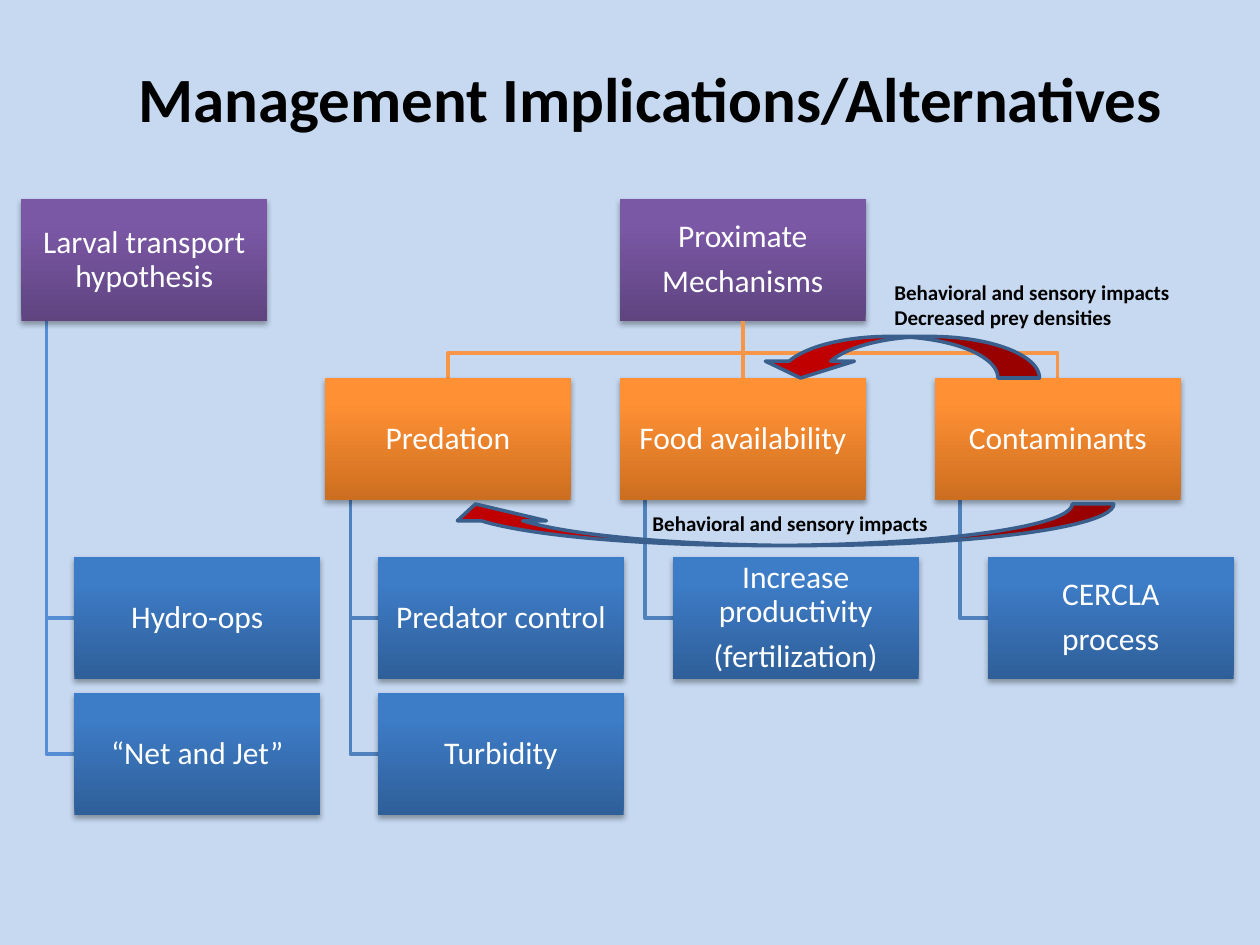
from dataclasses import dataclass

from lxml import etree
from pptx import Presentation
from pptx import util as u
from pptx.dml.color import RGBColor
from pptx.enum import shapes, text
from pptx.oxml import ns

Inches, Pt = u.Inches, u.Pt


@dataclass(frozen=True)
class Theme:
    font: str = "Calibri"
    background: str = "C6D9F1"
    ink: str = "000000"
    box_text: str = "FFFFFF"
    # Box gradients: bottom colour, upper colour
    purple: tuple = ("5F4480", "7B58A6")
    orange: tuple = ("CC6E20", "FF9034")
    blue: tuple = ("2F5F99", "3D7CC7")
    mechanism_line: str = "F79646"
    action_line: str = "4F81BD"
    larval_line: str = "558ED5"
    arrow_fill: str = "C00000"
    arrow_line: str = "3A5F8C"
    title_size: int = 36
    box_size: int = 18
    note_size: int = 12
    line_width: int = 2


THEME = Theme()
BOX_WIDTH, BOX_HEIGHT = 1.95, 0.97
BUS_INSET, CHILD_INSET = 0.2, 0.42
ROOT_TOP, MECHANISM_TOP, ACTION_TOP, ACTION_STEP = 1.58, 3, 4.42, 1.08


def color(value):
    return RGBColor.from_string(value)


def format_runs(paragraph, size, value, bold=False):
    for run in paragraph.runs:
        run.font.name = THEME.font
        run.font.size = Pt(size)
        run.font.bold = bold
        run.font.color.rgb = color(value)


def add_effects(shape, shadow=False):
    effects = etree.SubElement(shape._element.spPr, ns.qn("a:effectLst"))
    if shadow:
        outer = etree.SubElement(effects, ns.qn("a:outerShdw"), blurRad="40000",
                                 dist="23000", dir="5400000", rotWithShape="0")
        tint = etree.SubElement(outer, ns.qn("a:srgbClr"), val="000000")
        etree.SubElement(tint, ns.qn("a:alpha"), val="35000")


def style_line(shape, value):
    shape.line.color.rgb = color(value)
    shape.line.width = Pt(THEME.line_width)


def add_box(slide, left, top, label, gradient):
    box = slide.shapes.add_shape(shapes.MSO_SHAPE.RECTANGLE, Inches(left), Inches(top),
                                 Inches(BOX_WIDTH), Inches(BOX_HEIGHT))
    box.fill.gradient()
    box.fill.gradient_angle = 90
    for stop, value, position in zip(box.fill.gradient_stops, gradient, (0, 0.8)):
        stop.color.rgb = color(value)
        stop.position = position
    box.line.fill.background()
    add_effects(box, shadow=True)
    frame = box.text_frame
    frame.word_wrap = True
    frame.vertical_anchor = text.MSO_ANCHOR.MIDDLE
    frame.margin_left = frame.margin_right = Inches(0.01)
    frame.margin_top = frame.margin_bottom = Inches(0.01)
    frame.text = label
    for paragraph in frame.paragraphs:
        paragraph.alignment = text.PP_ALIGN.CENTER
        paragraph.line_spacing = 0.9
        format_runs(paragraph, THEME.box_size, THEME.box_text)
    for paragraph in frame.paragraphs[:-1]:
        paragraph.space_after = Pt(0.35 * THEME.box_size)
    return box


def add_elbow(slide, points, value):
    start, *rest = [(Inches(x), Inches(y)) for x, y in points]
    builder = slide.shapes.build_freeform(*start)
    builder.add_line_segments(rest, close=False)
    elbow = builder.convert_to_shape()
    elbow.fill.background()
    style_line(elbow, value)
    elbow.shadow.inherit = False


def add_branch(slide, left, top, label, gradient, actions, line):
    """A parent box with its actions hanging from a bus on the left."""
    bus, child_left = left + BUS_INSET, left + CHILD_INSET
    for index in reversed(range(len(actions))):
        middle = ACTION_TOP + index * ACTION_STEP + BOX_HEIGHT / 2
        add_elbow(slide, [(bus, top + BOX_HEIGHT), (bus, middle), (child_left, middle)], line)
    parent = add_box(slide, left, top, label, gradient)
    for index, action in enumerate(actions):
        add_box(slide, child_left, ACTION_TOP + index * ACTION_STEP, action, THEME.blue)
    return parent


def add_mechanisms(slide, root_left, branches):
    """The proximate mechanisms tree: root, three mechanisms and their actions."""
    root_middle = root_left + BOX_WIDTH / 2
    root_bottom = ROOT_TOP + BOX_HEIGHT
    for left, _, _ in branches:
        if left != root_left:
            middle = left + BOX_WIDTH / 2
            add_elbow(slide, [(root_middle, root_bottom), (root_middle, 2.8),
                              (middle, 2.8), (middle, MECHANISM_TOP)], THEME.mechanism_line)
    root = add_box(slide, root_left, ROOT_TOP, "Proximate\nMechanisms", THEME.purple)
    for left, label, actions in branches:
        parent = add_branch(slide, left, MECHANISM_TOP, label, THEME.orange,
                            actions, THEME.action_line)
        if left == root_left:
            stem = slide.shapes.add_connector(shapes.MSO_CONNECTOR.STRAIGHT, 0, 0, 0, 0)
            stem.begin_connect(root, 2)
            stem.end_connect(parent, 0)
            style_line(stem, THEME.mechanism_line)
            add_effects(stem)


def add_impact_arrow(slide, left, top, width, height):
    arrow = slide.shapes.add_shape(shapes.MSO_SHAPE.CURVED_UP_ARROW, Inches(left), Inches(top),
                                   Inches(width), Inches(height))
    for index, value in enumerate((2.142, 2.142, 0.405)):
        arrow.adjustments[index] = value
    arrow.fill.solid()
    arrow.fill.fore_color.rgb = color(THEME.arrow_fill)
    style_line(arrow, THEME.arrow_line)
    arrow.shadow.inherit = False
    return arrow


def add_label(slide, left, top, width, height, label, size):
    box = slide.shapes.add_textbox(Inches(left), Inches(top), Inches(width), Inches(height))
    frame = box.text_frame
    frame.word_wrap = False
    frame.auto_size = text.MSO_AUTO_SIZE.SHAPE_TO_FIT_TEXT
    frame.text = label
    for paragraph in frame.paragraphs:
        format_runs(paragraph, size, THEME.ink, bold=True)


def main():
    presentation = Presentation()
    presentation.slide_width, presentation.slide_height = Inches(10), Inches(7.5)
    slide = presentation.slides.add_slide(presentation.slide_layouts[6])
    slide.background.fill.solid()
    slide.background.fill.fore_color.rgb = color(THEME.background)

    # Hypothesis and mechanism trees
    add_branch(slide, 0.17, ROOT_TOP, "Larval transport hypothesis", THEME.purple,
               ["Hydro-ops", "“Net and Jet”"], THEME.larval_line)
    add_mechanisms(slide, 4.92, [
        (2.58, "Predation", ["Predator control", "Turbidity"]),
        (4.92, "Food availability", ["Increase productivity\n(fertilization)"]),
        (7.42, "Contaminants", ["CERCLA\nprocess"]),
    ])

    # Impact of contaminants on predation, below the mechanisms
    predation_arrow = add_impact_arrow(slide, 3.42, 4, 5.42, 0.33)
    predation_arrow._element.spPr.xfrm.set("flipH", "1")
    add_label(slide, 5.08, 4, 2.41, 0.3, "Behavioral and sensory impacts", THEME.note_size)

    # Title
    add_label(slide, 1, 0.42, 8.42, 0.71, "Management Implications/Alternatives",
              THEME.title_size)

    # Impact of contaminants on food, above the mechanisms
    food_arrow = add_impact_arrow(slide, 6, 2.67, 2.25, 0.33)
    food_arrow.rotation = 180
    add_label(slide, 7, 2.17, 2.41, 0.5,
              "Behavioral and sensory impacts\nDecreased prey densities", THEME.note_size)

    presentation.save("out.pptx")


if __name__ == "__main__":
    main()
